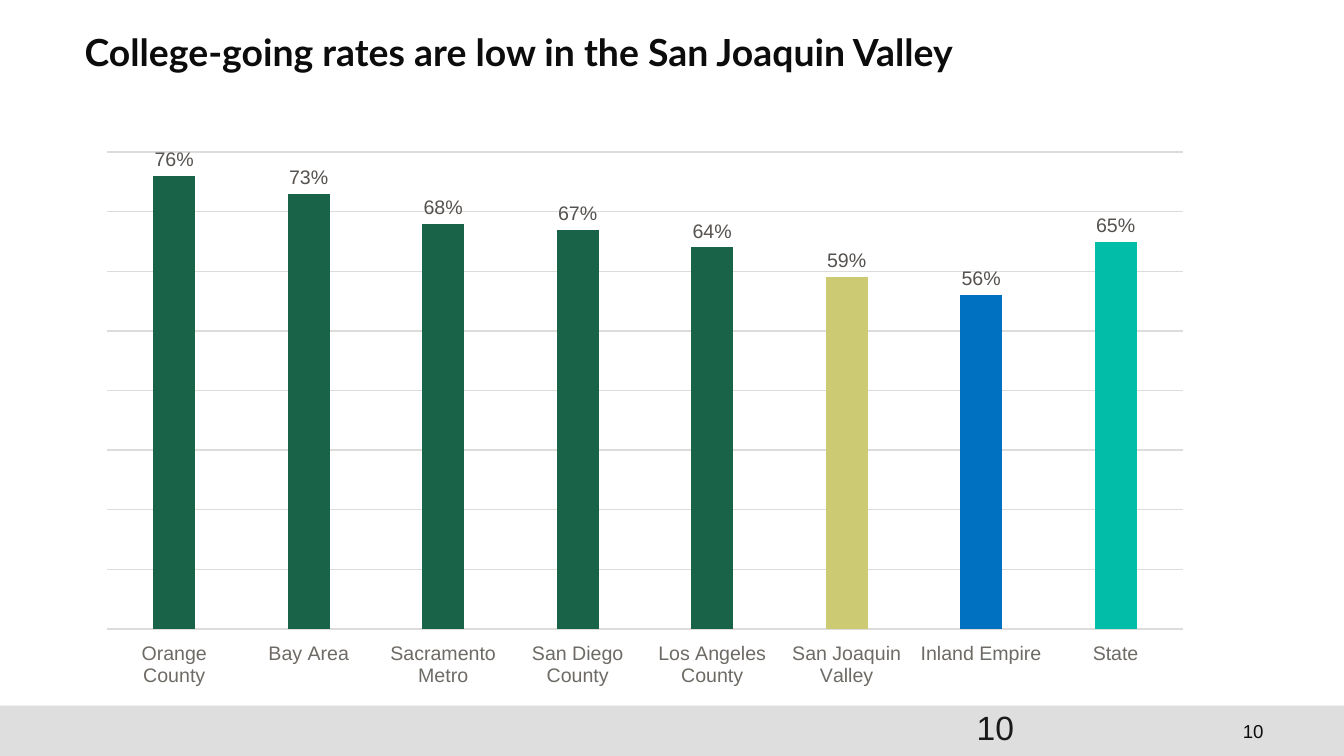
from dataclasses import dataclass

from lxml import etree
from pptx import Presentation
from pptx.chart.data import CategoryChartData
from pptx.dml.color import RGBColor
from pptx.enum.chart import XL_CHART_TYPE, XL_LABEL_POSITION, XL_TICK_LABEL_POSITION, XL_TICK_MARK
from pptx.enum.shapes import MSO_SHAPE
from pptx.enum.text import MSO_ANCHOR, PP_ALIGN
from pptx.oxml.ns import qn
from pptx.util import Cm, Pt

RECTANGLE = MSO_SHAPE.RECTANGLE
COLUMN_CLUSTERED = XL_CHART_TYPE.COLUMN_CLUSTERED
OUTSIDE_END = XL_LABEL_POSITION.OUTSIDE_END
LABELS_LOW = XL_TICK_LABEL_POSITION.LOW
NO_TICKS = XL_TICK_MARK.NONE
TOP, MIDDLE = MSO_ANCHOR.TOP, MSO_ANCHOR.MIDDLE
LEFT, RIGHT = PP_ALIGN.LEFT, PP_ALIGN.RIGHT

WHITE = RGBColor(0xFF, 0xFF, 0xFF)
BLACK = RGBColor(0x0D, 0x0C, 0x0C)
CHARCOAL = RGBColor(0x1A, 0x19, 0x18)
LABEL_GRAY = RGBColor(0x56, 0x52, 0x4F)
AXIS_GRAY = RGBColor(0x6E, 0x6A, 0x65)
GRID_GRAY = RGBColor(0xDE, 0xDC, 0xDB)
FOOTER_GRAY = RGBColor(0xDE, 0xDE, 0xDE)
GREEN = RGBColor(0x19, 0x63, 0x48)
OLIVE = RGBColor(0xCC, 0xCB, 0x74)
BLUE = RGBColor(0x00, 0x70, 0xC0)
TEAL = RGBColor(0x02, 0xBD, 0xA7)

PLOT_LAYOUT = {"x": 0.02, "y": 0.02, "w": 0.96, "h": 0.87}


@dataclass
class Label:
    text: str
    left: float
    top: float
    width: float
    height: float
    size: float
    color: RGBColor
    font_name: str = "Arial"
    bold: bool = False
    align: PP_ALIGN = LEFT
    anchor: MSO_ANCHOR = TOP
    line_spacing: float = 1.0
    has_margins: bool = True


@dataclass
class Region:
    name: str
    rate: float
    color: RGBColor = GREEN


LABELS = [
    Label("10", 18.21, 13.34, 5.92, 0.95, 10, BLACK, align=RIGHT, anchor=MIDDLE),
    Label("College-going rates are low in the San Joaquin Valley", 1.6, 0.64, 22.02, 2.03,
          20, BLACK, "Lato", bold=True, line_spacing=0.9, has_margins=False),
    Label("10", 18.21, 13.23, 5.92, 0.76, 18, CHARCOAL),
]

REGIONS = [
    Region("Orange County", 0.76),
    Region("Bay Area", 0.73),
    Region("Sacramento Metro", 0.68),
    Region("San Diego County", 0.67),
    Region("Los Angeles County", 0.64),
    Region("San Joaquin Valley", 0.59, OLIVE),
    Region("Inland Empire", 0.56, BLUE),
    Region("State", 0.65, TEAL),
]


def style_font(font, size: float, color: RGBColor, name: str = "Arial", bold: bool = False) -> None:
    font.size = Pt(size)
    font.name = name
    font.bold = bold
    font.color.rgb = color


def style_line(line) -> None:
    line.color.rgb = GRID_GRAY
    line.width = Pt(0.75)


def add_footer_band(slide) -> None:
    shape = slide.shapes.add_shape(RECTANGLE, Cm(0), Cm(13.34), Cm(25.4), Cm(0.95))
    shape.shadow.inherit = False
    shape.fill.solid()
    shape.fill.fore_color.rgb = FOOTER_GRAY
    shape.line.fill.background()


def add_label(slide, label: Label) -> None:
    box = slide.shapes.add_textbox(Cm(label.left), Cm(label.top), Cm(label.width), Cm(label.height))
    text_frame = box.text_frame
    text_frame.word_wrap = True
    text_frame.vertical_anchor = label.anchor
    if not label.has_margins:
        text_frame.margin_left = text_frame.margin_right = Cm(0)
        text_frame.margin_top = text_frame.margin_bottom = Cm(0)
    text_frame.text = label.text
    paragraph = text_frame.paragraphs[0]
    paragraph.alignment = label.align
    paragraph.line_spacing = label.line_spacing
    style_font(paragraph.runs[0].font, label.size, label.color, label.font_name, label.bold)


def set_plot_layout(chart) -> None:
    plot_area = chart.plots[0]._element.getparent()
    for old_layout in plot_area.findall(qn("c:layout")):
        plot_area.remove(old_layout)
    layout = etree.Element(qn("c:layout"))
    manual = etree.SubElement(layout, qn("c:manualLayout"))
    settings = {"layoutTarget": "inner", "xMode": "edge", "yMode": "edge", **PLOT_LAYOUT}
    for tag, value in settings.items():
        etree.SubElement(manual, qn(f"c:{tag}")).set("val", str(value))
    plot_area.insert(0, layout)


def add_rate_chart(slide, regions: list[Region]) -> None:
    chart_data = CategoryChartData(number_format="0%")
    chart_data.categories = [region.name for region in regions]
    chart_data.add_series("Series 1", [region.rate for region in regions])
    frame = slide.shapes.add_chart(
        COLUMN_CLUSTERED, Cm(1.6), Cm(2.67), Cm(21.18), Cm(10.36), chart_data)
    chart = frame.chart
    chart.has_title = False
    chart.has_legend = False
    style_font(chart.font, 10.5, CHARCOAL)
    set_plot_layout(chart)

    category_axis = chart.category_axis
    category_axis.major_tick_mark = NO_TICKS
    category_axis.tick_label_position = LABELS_LOW
    style_font(category_axis.tick_labels.font, 10.5, AXIS_GRAY)
    style_line(category_axis.format.line)

    value_axis = chart.value_axis
    value_axis.visible = False
    value_axis.minimum_scale = 0
    value_axis.maximum_scale = 0.8
    value_axis.major_unit = 0.1
    value_axis.has_major_gridlines = True
    style_line(value_axis.major_gridlines.format.line)

    plot = chart.plots[0]
    plot.vary_by_categories = False
    plot.gap_width = 219
    plot.overlap = -27
    plot.has_data_labels = True
    data_labels = plot.data_labels
    data_labels.show_value = True
    data_labels.number_format = "0%"
    data_labels.number_format_is_linked = False
    data_labels.position = OUTSIDE_END
    style_font(data_labels.font, 10.5, LABEL_GRAY)

    series = plot.series[0]
    series.format.fill.solid()
    series.format.fill.fore_color.rgb = GREEN
    for index, region in enumerate(regions):
        if region.color != GREEN:
            fill = series.points[index].format.fill
            fill.solid()
            fill.fore_color.rgb = region.color


def main() -> None:
    presentation = Presentation()
    presentation.slide_width = Cm(25.4)
    presentation.slide_height = Cm(14.29)
    slide = presentation.slides.add_slide(presentation.slide_layouts[6])
    slide.background.fill.solid()
    slide.background.fill.fore_color.rgb = WHITE
    add_footer_band(slide)
    for label in LABELS:
        add_label(slide, label)
    add_rate_chart(slide, REGIONS)
    presentation.save("out.pptx")


if __name__ == "__main__":
    main()
